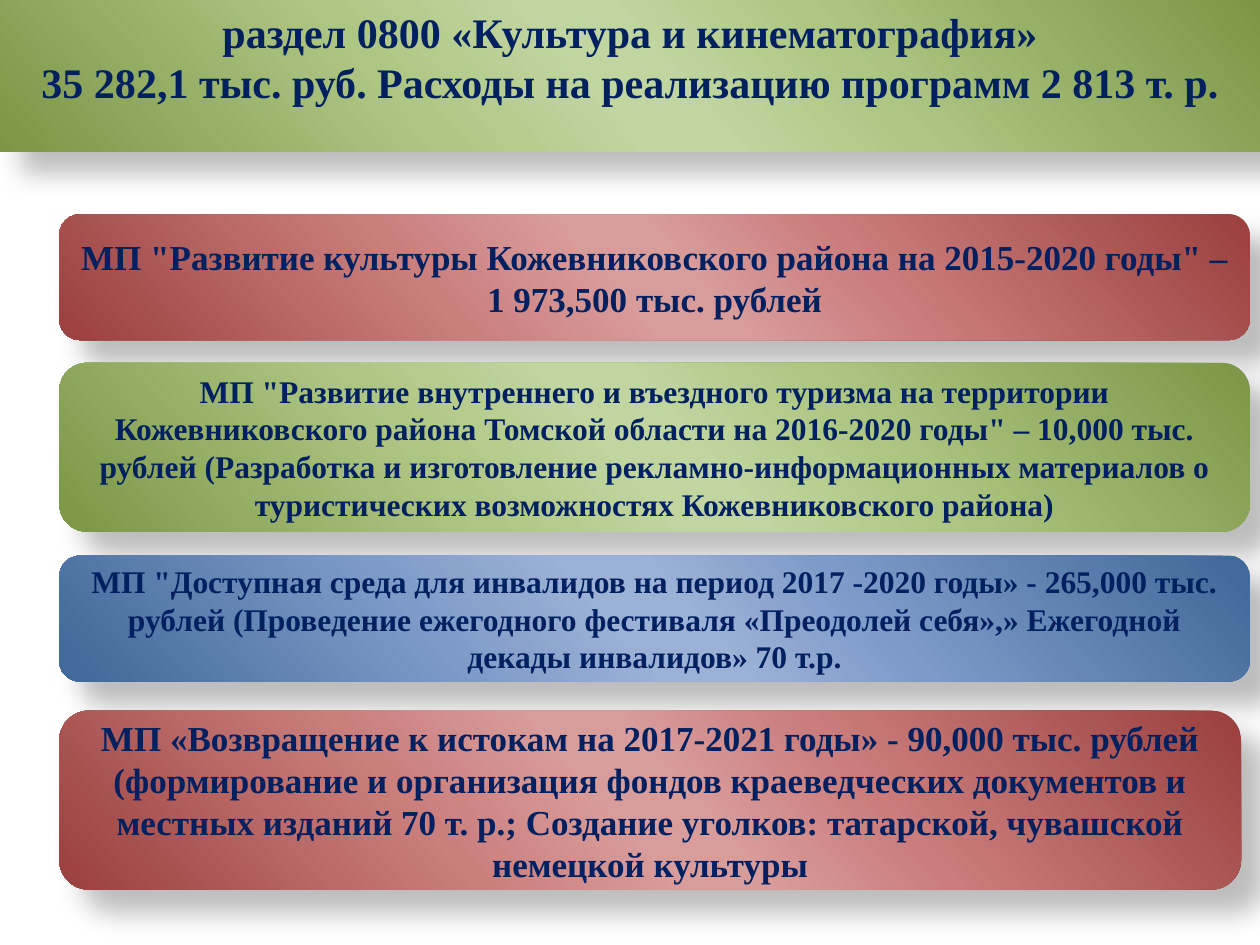
from lxml.etree import SubElement
from pptx import Presentation
from pptx.dml.color import RGBColor
from pptx.enum.shapes import MSO_SHAPE
from pptx.enum.text import MSO_ANCHOR, PP_ALIGN
from pptx.oxml.ns import qn
from pptx.util import Inches, Pt

COLORS = {"text": "002060", "shadow": "000000"}
GRADIENTS = {
    "green": ("7C9647", "ADC682", "C0D59F", "C0D59F", "AEC683", "7C9647"),
    "red": ("9A403E", "CA7D7C", "D89C9B", "D89C9B", "CA7F7D", "9A403E"),
    "blue": ("3F6797", "7D9AC8", "9CB1D6", "9CB1D6", "7E9BC8", "3F6797"),
}
STOPS = (0, 33, 47, 53, 68, 100)
FONT = "Times New Roman"

TITLE = (
    "раздел 0800 «Культура и кинематография»\v"
    "35 282,1 тыс. руб. Расходы на реализацию программ 2 813 т. р."
)
PROGRAMS = (
    (1.7, 9.45, 1, "red", 20,
     'МП "Развитие культуры Кожевниковского района на 2015-2020 годы" – '
     "1\u00a0973,500 тыс. рублей"),
    (2.88, 9.45, 1.34, "green", 18,
     'МП "Развитие внутреннего и въездного туризма на территории '
     'Кожевниковского района Томской области на 2016-2020 годы" – 10,000 тыс. '
     "рублей (Разработка и изготовление рекламно-информационных материалов о "
     "туристических возможностях Кожевниковского района)"),
    (4.41, 9.45, 1, "blue", 18,
     'МП "Доступная среда для инвалидов на период 2017 -2020 годы» - 265,000 тыс. '
     "рублей (Проведение ежегодного фестиваля «Преодолей себя»,» Ежегодной "
     "декады инвалидов» 70 т.р."),
    (5.64, 9.38, 1.42, "red", 20,
     "МП «Возвращение к истокам на 2017-2021 годы» - 90,000 тыс. рублей "
     "(формирование и организация фондов краеведческих документов и "
     "местных изданий 70 т. р.; Создание уголков: татарской, чувашской "
     "немецкой культуры"),
)


def apply_gradient(shape, colors):
    """Fill the shape with a diagonal gradient of the given colours."""
    shape.fill.gradient()
    shape.fill.gradient_angle = 221
    stop_list = shape._element.spPr.find(qn("a:gradFill")).find(qn("a:gsLst"))
    for stop in list(stop_list):
        stop_list.remove(stop)
    for position, color in zip(STOPS, colors):
        stop = SubElement(stop_list, qn("a:gs"), pos=str(position * 1000))
        SubElement(stop, qn("a:srgbClr"), val=color)


def apply_shadow(shape):
    """Give the shape a soft shadow towards the lower right."""
    shape.shadow.inherit = False
    effects = shape._element.spPr.find(qn("a:effectLst"))
    shadow = SubElement(
        effects, qn("a:outerShdw"), blurRad=str(Pt(15)), dist=str(Pt(18)),
        dir=str(45 * 60000), algn="tl", rotWithShape="0",
    )
    color = SubElement(shadow, qn("a:srgbClr"), val=COLORS["shadow"])
    SubElement(color, qn("a:alpha"), val="26000")


def add_panel(slide, box, kind, gradient, text, size, anchor):
    """Add a shaded panel with centred bold text in the given box."""
    shape = slide.shapes.add_shape(kind, *map(Inches, box))
    apply_gradient(shape, GRADIENTS[gradient])
    shape.line.fill.background()
    apply_shadow(shape)
    text_frame = shape.text_frame
    text_frame.word_wrap = True
    text_frame.vertical_anchor = anchor
    paragraph = text_frame.paragraphs[0]
    paragraph.text = text
    paragraph.alignment = PP_ALIGN.CENTER
    for run in paragraph.runs:
        run.font.name = FONT
        run.font.size = Pt(size)
        run.font.bold = True
        run.font.color.rgb = RGBColor.from_string(COLORS["text"])


def add_title(slide, box):
    """Add the title band."""
    add_panel(slide, box, MSO_SHAPE.RECTANGLE, "green", TITLE, 24, MSO_ANCHOR.TOP)


def add_programs(slide, left):
    """Add the column of programme panels."""
    for top, width, height, gradient, size, text in PROGRAMS:
        add_panel(slide, (left, top, width, height), MSO_SHAPE.ROUNDED_RECTANGLE,
                  gradient, text, size, MSO_ANCHOR.MIDDLE)


def main():
    """Build and save the presentation."""
    presentation = Presentation()
    presentation.slide_width = Inches(10)
    presentation.slide_height = Inches(7.5)
    slide = presentation.slides.add_slide(presentation.slide_layouts[6])
    add_title(slide, (0, 0, 10, 1.2))
    add_programs(slide, 0.47)
    presentation.save("out.pptx")


if __name__ == "__main__":
    main()
